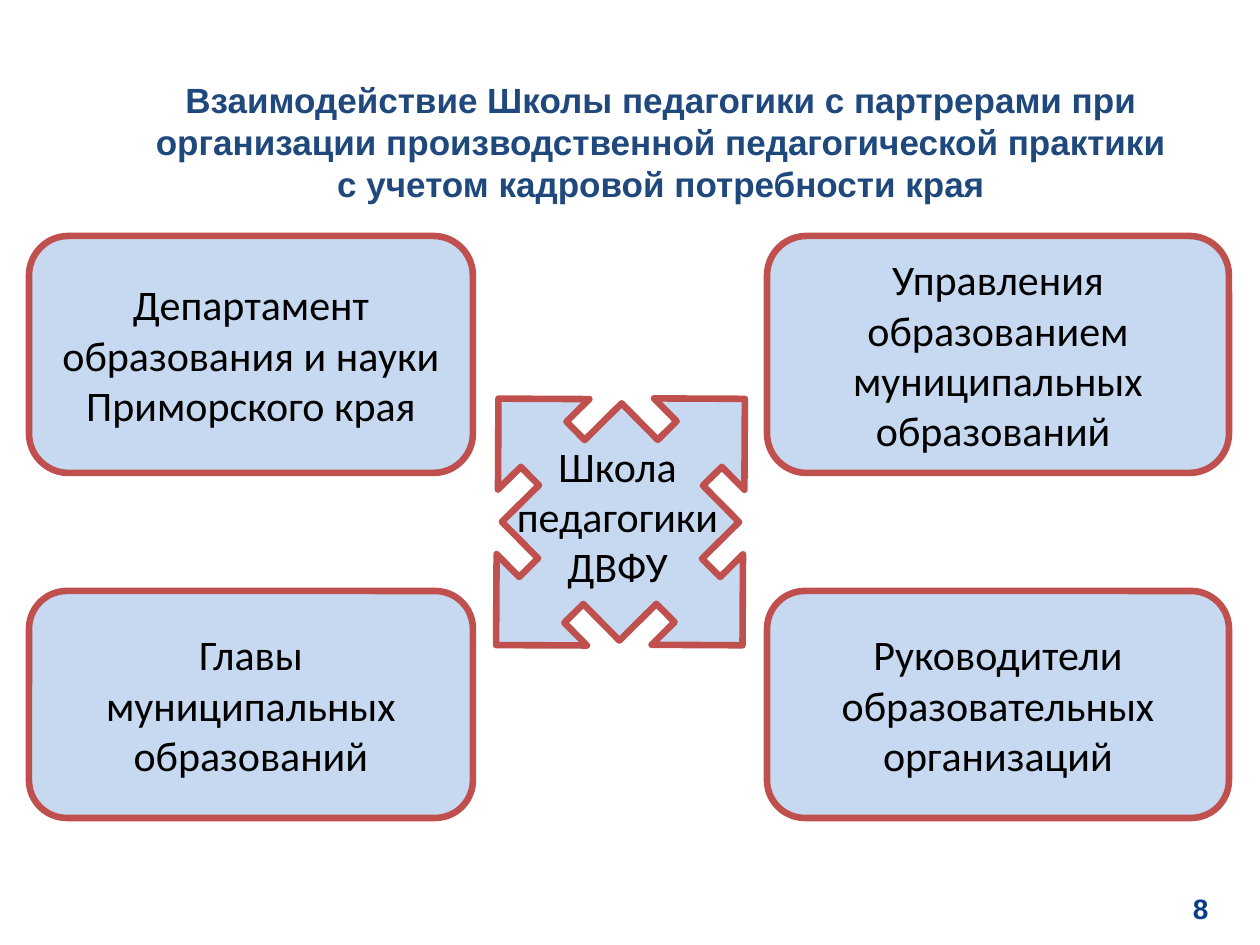
from pptx import Presentation
from pptx import util as u
from pptx.dml.color import RGBColor
from pptx.enum import shapes, text

SCALE = 914400 / 126  # EMU per px

NAVY = RGBColor(0x1F, 0x49, 0x7D)
NUMBER_BLUE = RGBColor(0x07, 0x3D, 0x86)
PALE_BLUE = RGBColor(0xC6, 0xD9, 0xF1)
RED = RGBColor(0xC0, 0x50, 0x4D)
BLACK = RGBColor(0, 0, 0)

# Partner grid: (left, width) of columns, (top, height) of rows
COLUMNS = [(29, 444), (767, 462)]
ROWS = [(236, 237), (591, 227)]
PARTNERS = [
    ["Департамент образования и науки Приморского края",
     "Управления образованием муниципальных образований "],
    ["Главы муниципальных образований",
     "Руководители образовательных организаций"],
]


def px(*lengths):
    return [u.Emu(round(length * SCALE)) for length in lengths]


def write(shape, words, size, color, font="Calibri", bold=False,
          align=text.PP_ALIGN.CENTER, anchor=text.MSO_ANCHOR.TOP, inset=None):
    frame = shape.text_frame
    frame.word_wrap = True
    frame.auto_size = text.MSO_AUTO_SIZE.NONE
    frame.vertical_anchor = anchor
    if inset is not None:
        frame.margin_left = frame.margin_right = inset
        frame.margin_top = frame.margin_bottom = inset
    paragraph = frame.paragraphs[0]
    paragraph.alignment = align
    run = paragraph.add_run()
    run.text = words
    run.font.name = font
    run.font.size = u.Pt(size)
    run.font.bold = bold
    run.font.color.rgb = color
    return paragraph


def add_panel(parent, kind, left, top, width, height):
    shape = parent.add_shape(kind, *px(left, top, width, height))
    shape.shadow.inherit = False
    shape.fill.solid()
    shape.fill.fore_color.rgb = PALE_BLUE
    shape.line.color.rgb = RED
    shape.line.width = u.Pt(3.78)
    return shape


def add_title(slide, words):
    title = slide.shapes.title
    title.left, title.top, title.width, title.height = px(147, 78, 1028, 147)
    paragraph = write(title, words, 20, NAVY, "Arial", True, inset=0)
    paragraph.line_spacing = u.Pt(24)


def add_partners(slide):
    for (top, height), names in zip(ROWS, PARTNERS):
        for (left, width), name in zip(COLUMNS, names):
            panel = add_panel(slide.shapes, shapes.MSO_SHAPE.ROUNDED_RECTANGLE,
                              left, top, width, height)
            write(panel, name, 24, BLACK, anchor=text.MSO_ANCHOR.MIDDLE)


def add_school(slide):
    group = slide.shapes.add_group_shape()
    arrows = add_panel(group.shapes, shapes.MSO_SHAPE.QUAD_ARROW_CALLOUT,
                       447, 347, 347, 350)
    arrows.rotation = 45.3
    label = group.shapes.add_textbox(*px(483, 434, 269, 165))
    write(label, "Школа педагогики ДВФУ", 24, BLACK)


def add_page_number(slide, number):
    box = slide.shapes.add_textbox(*px(1193, 892, 38, 35))
    write(box, number, 16, NUMBER_BLUE, "Arial", True,
          align=text.PP_ALIGN.LEFT, inset=0)


def main():
    presentation = Presentation()
    presentation.slide_width, presentation.slide_height = px(1260, 945)
    slide = presentation.slides.add_slide(presentation.slide_layouts[5])

    add_title(slide, "Взаимодействие Школы педагогики с партрерами при "
                     "организации производственной педагогической практики "
                     "с учетом кадровой потребности края")
    add_partners(slide)
    add_school(slide)
    add_page_number(slide, "8")

    presentation.save("out.pptx")


if __name__ == "__main__":
    main()
